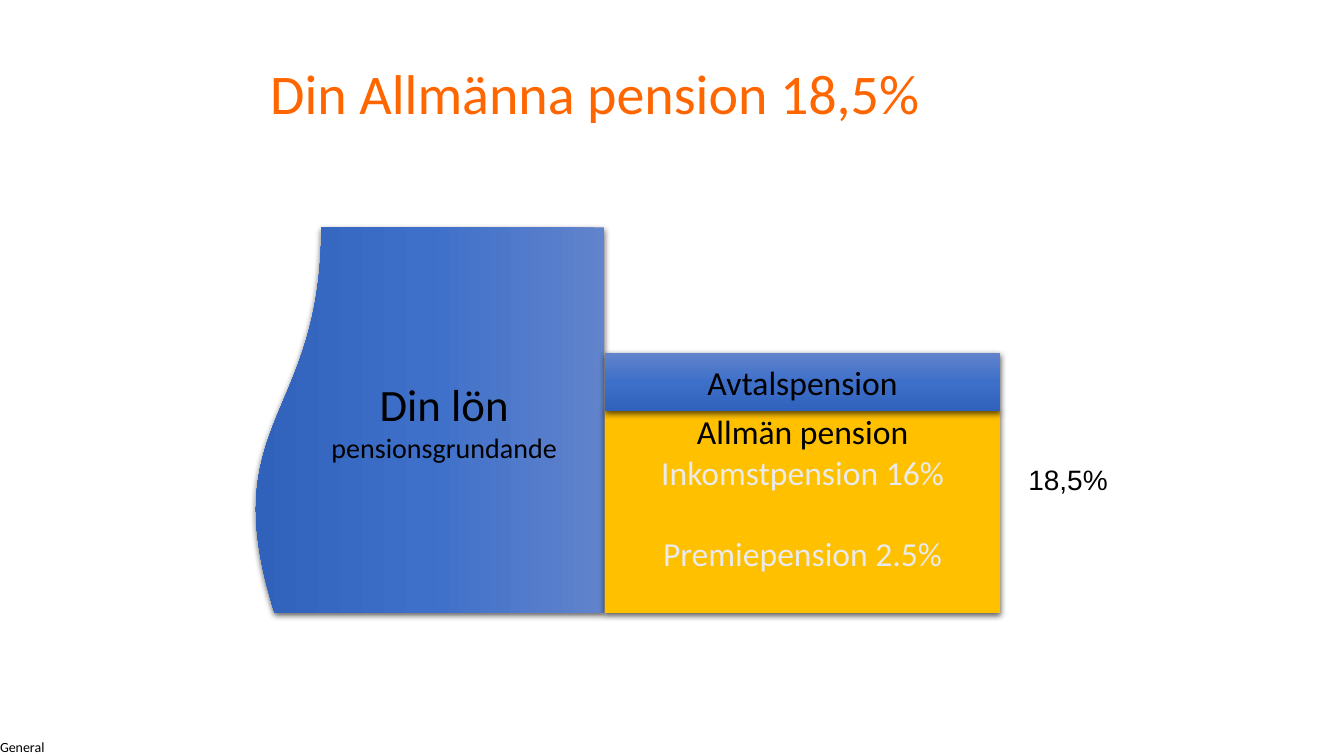
from copy import deepcopy

from lxml import etree
from pptx import Presentation
from pptx.dml.color import RGBColor
from pptx.enum.shapes import MSO_SHAPE
from pptx.enum.text import MSO_ANCHOR, MSO_AUTO_SIZE, PP_ALIGN
from pptx.oxml.ns import qn
from pptx.util import Inches, Pt

RECT, WAVE = MSO_SHAPE.RECTANGLE, MSO_SHAPE.FLOWCHART_DOCUMENT
TOP, MIDDLE, BOTTOM = MSO_ANCHOR.TOP, MSO_ANCHOR.MIDDLE, MSO_ANCHOR.BOTTOM
LEFT, CENTER = PP_ALIGN.LEFT, PP_ALIGN.CENTER

BLACK = RGBColor(0x00, 0x00, 0x00)
ORANGE = RGBColor(0xFF, 0x66, 0x00)
GOLD = RGBColor(0xFF, 0xC0, 0x00)
PALE = RGBColor(0xEA, 0xEA, 0xEA)
BLUES = [RGBColor(0x61, 0x83, 0xCB), RGBColor(0x3E, 0x70, 0xCA),
         RGBColor(0x30, 0x62, 0xBB)]

# Content: each line is (text, size, colour)
TITLE = [("Din Allmänna pension 18,5%", 40, ORANGE)]
SALARY = [("Din lön", 32, BLACK), ("pensionsgrundande", 20, BLACK)]
PUBLIC = [("Allmän pension", 24, BLACK), ("Inkomstpension 16%", 24, PALE),
          ("Premiepension 2.5%", 24, PALE)]
WORK = [("Avtalspension", 24, BLACK)]
SHARE = [("18,5%", 20, BLACK)]
LABEL = [("General", 10, BLACK)]

# Layout: the two pension blocks share a left edge and a width
COL_X, COL_W = 6, 3.92
WORK_Y, WORK_H, PUBLIC_H = 3.5, 0.58, 2
SALARY_BOX = (2.33, 2.42, 3.83, 3.5)
WORK_BOX = (COL_X, WORK_Y, COL_W, WORK_H)
PUBLIC_BOX = (COL_X, WORK_Y + WORK_H, COL_W, PUBLIC_H)
SHARE_BOX = (10.1, 3.52, 0.99, 1.45)
LABEL_BOX = (0, 7.33, 0.48, 0.17)
TITLE_BOX = (2.58, 0.33, 8.75, 1.25)


def write(shape, lines, align=LEFT, anchor=MIDDLE, font="Calibri", wrap=False):
    frame = shape.text_frame
    frame.text = "\n".join(text for text, size, color in lines)
    frame.word_wrap = wrap
    frame.auto_size = MSO_AUTO_SIZE.NONE
    frame.vertical_anchor = anchor
    for para, (text, size, color) in zip(frame.paragraphs, lines):
        para.alignment = align
        face = para.runs[0].font
        face.name, face.size, face.color.rgb = font, Pt(size), color
    return frame


def shade(fill):
    fill.gradient()
    fill.gradient_angle = 270
    first = fill.gradient_stops[0]
    first.color.rgb = BLUES[0]
    fill.gradient_stops[1].color.rgb = BLUES[2]
    # Add the middle stop
    stops = fill.gradient_stops
    head = shape_stops(stops)
    mid = deepcopy(head[0])
    head.insert(1, mid)
    for stop, pos, color in zip(fill.gradient_stops, (0, 0.5, 1), BLUES):
        stop.position = pos
        stop.color.rgb = color


def shape_stops(stops):
    return stops[0]._gs.getparent()


def block(kind, box, color=None):
    shape = slide.shapes.add_shape(kind, *map(Inches, box))
    shape.line.fill.background()
    if color is None:
        shade(shape.fill)
    else:
        shape.fill.solid()
        shape.fill.fore_color.rgb = color
    # Soft shadow straight below
    shape.shadow.inherit = False
    effects = shape.element.spPr.find(qn("a:effectLst"))
    outer = etree.SubElement(effects, qn("a:outerShdw"), blurRad=str(Pt(4.5)),
                             dist=str(Pt(1.5)), dir="5400000", algn="ctr",
                             rotWithShape="0")
    tint = etree.SubElement(outer, qn("a:srgbClr"), val="000000")
    etree.SubElement(tint, qn("a:alpha"), val="63000")
    return shape


def label(box, lines, **style):
    return write(slide.shapes.add_textbox(*map(Inches, box)), lines, **style)


deck = Presentation()
deck.slide_width, deck.slide_height = Inches(13.33), Inches(7.5)
slide = deck.slides.add_slide(deck.slide_layouts[5])

# Title
title = slide.shapes.title
title.left, title.top, title.width, title.height = map(Inches, TITLE_BOX)
write(title, TITLE, wrap=True).paragraphs[0].line_spacing = 0.9

# Corner label
corner = label(LABEL_BOX, LABEL, anchor=TOP)
corner.margin_left = corner.margin_right = 0
corner.margin_top = corner.margin_bottom = 0

# Salary: a document shape on its side, with upright text
salary = block(WAVE, SALARY_BOX)
salary.rotation = 90
salary.element.spPr.find(qn("a:xfrm")).set("flipH", "1")
write(salary, SALARY, CENTER)
body = salary.text_frame._txBody.find(qn("a:bodyPr"))
body.set("vert", "eaVert")
body.set("rot", "10800000")

# Pension blocks
public = write(block(RECT, PUBLIC_BOX, GOLD), PUBLIC, CENTER, TOP)
public.margin_top = 0
public.paragraphs[2].space_before = Pt(29.3)
write(block(RECT, WORK_BOX), WORK, CENTER)

# Share of salary
label(SHARE_BOX, SHARE, anchor=BOTTOM, font="Arial")

deck.save("out.pptx")
